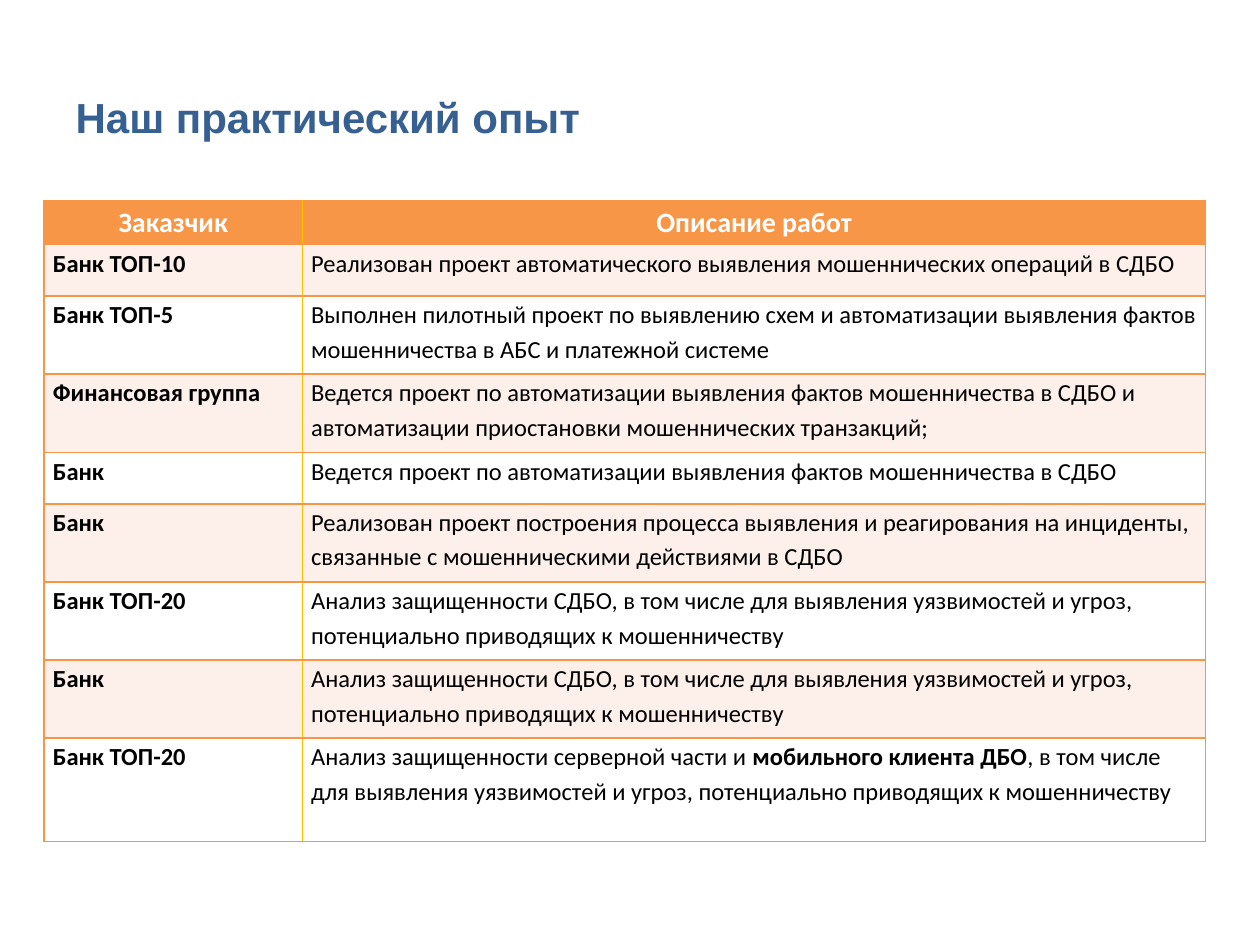
import pptx
import pptx.dml.color
import pptx.enum.text
import pptx.oxml.ns
import pptx.util
from lxml import etree

Inches = pptx.util.Inches
ALIGN = pptx.enum.text.PP_ALIGN
ORANGE = "F79646"
YELLOW = "FFC000"


def color(value):
    return pptx.dml.color.RGBColor.from_string(value)


def add_text(paragraph, text, font="Calibri", size=14, fill="000000", bold=False):
    run = paragraph.add_run()
    run.text = text
    run.font.name = font
    run.font.size = pptx.util.Pt(size)
    run.font.bold = bold
    run.font.color.rgb = color(fill)


presentation = pptx.Presentation()
presentation.slide_width = Inches(10)
presentation.slide_height = Inches(7.5)
slide = presentation.slides.add_slide(presentation.slide_layouts[5])

title = slide.shapes.title
title.left, title.top = Inches(0.5), Inches(0.3)
title.width, title.height = Inches(9), Inches(1.25)
title.text_frame.vertical_anchor = pptx.enum.text.MSO_ANCHOR.MIDDLE
title_paragraph = title.text_frame.paragraphs[0]
title_paragraph.alignment = ALIGN.LEFT
add_text(title_paragraph, "Наш практический опыт", font="Arial", size=24, fill="376092", bold=True)

security_analysis = (
    "Анализ защищенности СДБО, в том числе для выявления уязвимостей и угроз, "
    "потенциально приводящих к мошенничеству"
)
rows = [
    (0.35, "Заказчик", ["Описание работ"]),
    (0.41, "Банк ТОП-10", ["Реализован проект автоматического выявления мошеннических операций в СДБО"]),
    (0.62, "Банк ТОП-5", ["Выполнен пилотный проект по выявлению схем и автоматизации выявления "
                          "фактов мошенничества в АБС и платежной системе"]),
    (0.62, "Финансовая группа", ["Ведется проект по автоматизации выявления фактов мошенничества в СДБО и "
                                 "автоматизации приостановки мошеннических транзакций;"]),
    (0.41, "Банк", ["Ведется проект по автоматизации выявления фактов мошенничества в СДБО"]),
    (0.62, "Банк", ["Реализован проект построения процесса выявления и реагирования на инциденты, "
                    "связанные с мошенническими действиями в СДБО"]),
    (0.62, "Банк ТОП-20", [security_analysis]),
    (0.62, "Банк", [security_analysis]),
    (0.82, "Банк ТОП-20", ["Анализ защищенности серверной части и ", "мобильного клиента ДБО",
                           ", в том числе для выявления уязвимостей и угроз, "
                           "потенциально приводящих к мошенничеству"]),
]
column_widths = [2.05, 7.17]
column_borders = [
    {"lnL": ORANGE, "lnR": YELLOW, "lnT": ORANGE, "lnB": ORANGE},
    {"lnL": YELLOW, "lnR": ORANGE, "lnT": ORANGE, "lnB": ORANGE},
]

table = slide.shapes.add_table(
    len(rows), len(column_widths), Inches(0.35), Inches(1.59), Inches(9.22), Inches(5.09)
).table
for column, width in zip(table.columns, column_widths):
    column.width = Inches(width)

for row_index, (height, customer, description) in enumerate(rows):
    table.rows[row_index].height = Inches(height)
    header = row_index == 0
    row_fill = ORANGE if header else ("FDEFE9" if row_index % 2 else "FFFFFF")

    for column_index, parts in enumerate([[customer], description]):
        cell = table.cell(row_index, column_index)
        cell.margin_left = cell.margin_right = Inches(0.07)
        cell.margin_top = cell.margin_bottom = 0
        cell.fill.solid()
        cell.fill.fore_color.rgb = color(row_fill)

        paragraph = cell.text_frame.paragraphs[0]
        paragraph.line_spacing = 1.15
        paragraph.alignment = ALIGN.CENTER if header else ALIGN.LEFT
        for part_index, part in enumerate(parts):
            add_text(
                paragraph,
                part,
                size=16 if header else 14,
                fill="FFFFFF" if header else "000000",
                bold=header or column_index == 0 or part_index == 1,
            )

        properties = cell._tc.get_or_add_tcPr()
        for position, (side, border_color) in enumerate(column_borders[column_index].items()):
            border = etree.Element(pptx.oxml.ns.qn(f"a:{side}"), w=str(pptx.util.Pt(1)))
            border_fill = etree.SubElement(border, pptx.oxml.ns.qn("a:solidFill"))
            etree.SubElement(border_fill, pptx.oxml.ns.qn("a:srgbClr"), val=border_color)
            properties.insert(position, border)

presentation.save("out.pptx")
